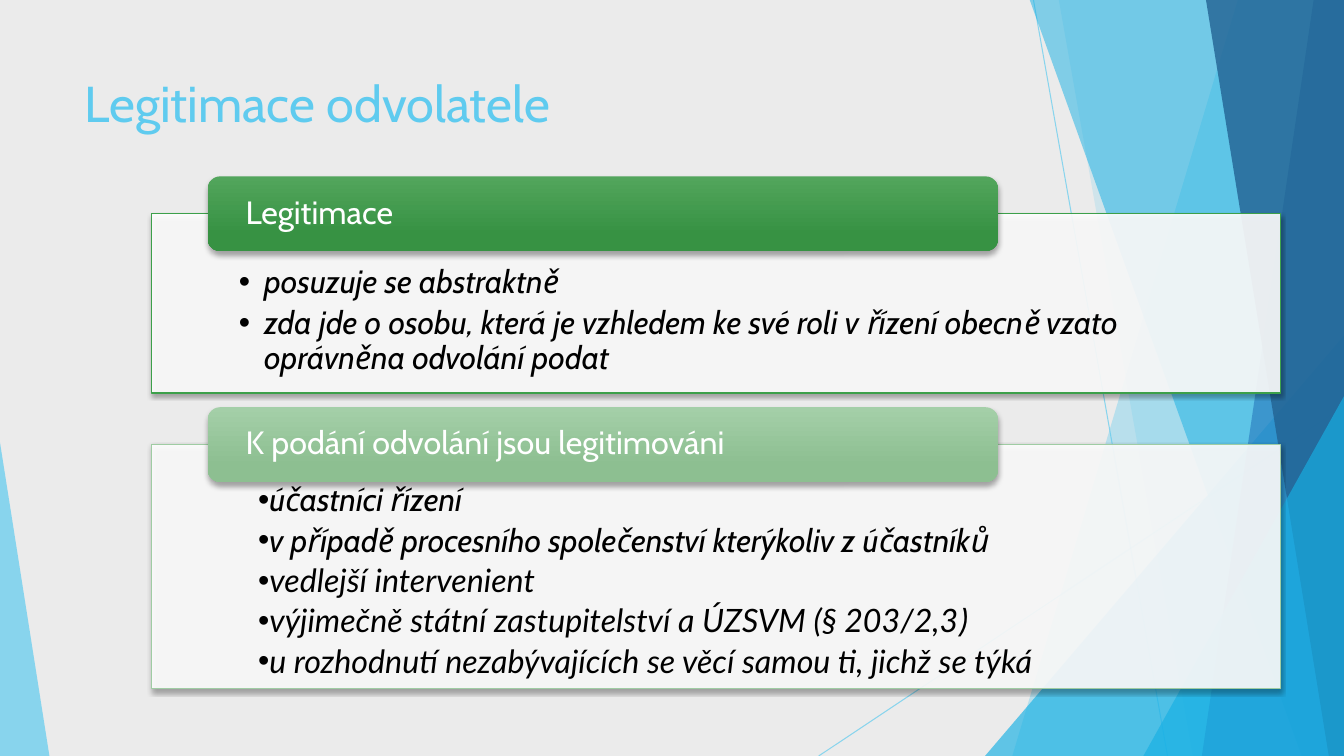
"""Build the slide on who may lodge an appeal."""
from dataclasses import dataclass

from lxml.etree import SubElement
from pptx import Presentation
from pptx.dml.color import RGBColor
from pptx.enum.shapes import MSO_CONNECTOR, MSO_SHAPE
from pptx.enum.text import MSO_ANCHOR, PP_ALIGN
from pptx.oxml.ns import qn
from pptx.util import Pt

PX = 9144
WIDE, HIGH = 1333, 750
SKY, BLUE, BLACK, WHITE = "5FCBEF", "17B0E4", "000000", "FFFFFF"
CABIN, LATO = "Cabin", "Lato"


@dataclass
class Ray:
    """A thin line from one point to another."""
    start: tuple[int, int]
    end: tuple[int, int]


@dataclass
class Shard:
    """A see-through piece, given by its corners."""
    points: list[tuple[int, int]]
    tone: str
    alpha: int


@dataclass
class Wedge:
    """A see-through triangle, with its tip at a share of its width."""
    box: tuple[int, int, int, int]
    tip: int
    tone: str
    alpha: int


@dataclass
class Line:
    """A bullet line, with an optional tail in Cabin."""
    text: str
    face: str = CABIN
    tail: str = ""


@dataclass
class Panel:
    """A framed list with a header tab over its top edge."""
    top: int
    height: int
    edge: str
    shades: tuple[str, str]
    inset: tuple[int, int, int, int]
    hang: int
    head: str
    lines: list[Line]


def tone(code: str) -> RGBColor:
    """Turn a hex string into a colour."""
    return RGBColor.from_string(code)


def scale(*sizes: int) -> list[int]:
    """Turn px into EMU."""
    return [size * PX for size in sizes]


def fade(shape, alpha: int) -> None:
    """Set the opacity of the first colour in a shape, in percent."""
    color = next(shape.element.iter(qn("a:srgbClr")))
    SubElement(color, qn("a:alpha"), val=str(alpha * 1000))


def paint(shape, code: str, alpha: int) -> None:
    """Fill a shape without outline or shadow."""
    shape.shadow.inherit = False
    shape.fill.solid()
    shape.fill.fore_color.rgb = tone(code)
    shape.line.fill.background()
    fade(shape, alpha)


def shade(shape, blur: int, drop: int) -> None:
    """Cast a soft shadow straight down, in points."""
    shape.shadow.inherit = False
    effects = shape.element.spPr.find(qn("a:effectLst"))
    outer = SubElement(effects, qn("a:outerShdw"), blurRad=str(Pt(blur)),
                       dist=str(Pt(drop)), dir="5400000", rotWithShape="0")
    color = SubElement(outer, qn("a:srgbClr"), val=BLACK)
    SubElement(color, qn("a:alpha"), val="35000")


def style(run, size: int, code: str, face: str = CABIN, slant: bool = False) -> None:
    """Format one run."""
    font = run.font
    font.size, font.name, font.italic = Pt(size), face, slant
    font.color.rgb = tone(code)


def inset(frame, sides: tuple[int, int, int, int]) -> None:
    """Wrap a text frame and set its four margins."""
    frame.word_wrap = True
    (frame.margin_left, frame.margin_top,
     frame.margin_right, frame.margin_bottom) = scale(*sides)


def draw_ray(slide, ray: Ray) -> None:
    """Draw one thin line."""
    link = slide.shapes.add_connector(MSO_CONNECTOR.STRAIGHT, *scale(*ray.start, *ray.end))
    link.line.color.rgb = tone(SKY)
    link.line.width = Pt(0.75)
    fade(link, 70)
    SubElement(link.element.spPr, qn("a:effectLst"))


def draw_shard(slide, shard: Shard) -> None:
    """Draw one free outline."""
    pen = slide.shapes.build_freeform(*shard.points[0], scale=PX)
    pen.add_line_segments(shard.points[1:], close=True)
    paint(pen.convert_to_shape(), shard.tone, shard.alpha)


def draw_wedge(slide, wedge: Wedge) -> None:
    """Draw one triangle."""
    shape = slide.shapes.add_shape(MSO_SHAPE.ISOSCELES_TRIANGLE, *scale(*wedge.box))
    shape.adjustments[0] = wedge.tip
    paint(shape, wedge.tone, wedge.alpha)


def write_line(para, line: Line, hang: int) -> None:
    """Write one bullet line."""
    para.text = line.text
    style(para.runs[0], 23, BLACK, line.face, True)
    if line.tail:
        run = para.add_run()
        run.text = line.tail
        style(run, 23, BLACK, slant=True)
    para.level, para.alignment = 1, PP_ALIGN.LEFT
    para.line_spacing, para.space_after = 0.9, Pt(4)
    props = para._p.get_or_add_pPr()
    props.set("marL", str(25 * PX))
    props.set("indent", str(hang * PX))
    SubElement(props, qn("a:buFont"), typeface="Arial")
    SubElement(props, qn("a:buChar"), char="•")


def draw_panel(slide, panel: Panel) -> None:
    """Draw a framed list and its header."""
    body = slide.shapes.add_shape(MSO_SHAPE.RECTANGLE, *scale(150, panel.top, 1120, panel.height))
    paint(body, WHITE, 90)
    body.line.color.rgb = tone(panel.edge)
    body.line.width = Pt(1)
    shade(body, 3, 2)
    frame = body.text_frame
    inset(frame, panel.inset)
    frame.vertical_anchor = MSO_ANCHOR.TOP
    for index, line in enumerate(panel.lines):
        para = frame.add_paragraph() if index else frame.paragraphs[0]
        write_line(para, line, panel.hang)

    tab = slide.shapes.add_shape(MSO_SHAPE.ROUNDED_RECTANGLE, *scale(206, panel.top - 37, 784, 74))
    tab.fill.gradient()
    tab.fill.gradient_angle = 270
    for stop, code, place in zip(tab.fill.gradient_stops, panel.shades, (0, 0.78)):
        stop.color.rgb = tone(code)
        stop.position = place
    tab.line.fill.background()
    shade(tab, 4, 3)
    frame = tab.text_frame
    frame.text = panel.head
    inset(frame, (34, 0, 34, 0))
    frame.vertical_anchor = MSO_ANCHOR.MIDDLE
    para = frame.paragraphs[0]
    para.alignment, para.line_spacing = PP_ALIGN.LEFT, 0.9
    style(para.runs[0], 23, WHITE)


def right(top: int, low: int, code: str, alpha: int, base: int = WIDE) -> Shard:
    """Give a piece that reaches from a slanted left edge to the slide's right side."""
    return Shard([(top, -1), (WIDE, -1), (base, HIGH), (low, HIGH)], code, alpha)


DECOR = [
    Ray((1025, 0), (1158, HIGH)),
    Ray((WIDE, 403), (812, HIGH)),
    right(1228, 1004, SKY, 36),
    right(1050, 1183, SKY, 20),
    Wedge((977, 333, 356, 417), 1, BLUE, 66),
    right(1021, 1291, BLUE, 50),
    right(1303, 1192, "2E83C3", 70),
    right(1196, 1318, "226292", 80),
    Wedge((1134, 393, 199, 357), 1, BLUE, 66),
    Wedge((0, 439, 49, 311), 0, SKY, 70),
]
PANELS = [
    Panel(212, 178, "3CA04A", ("52A55C", "379243"), (87, 52, 87, 18), -25, "Legitimace", [
        Line("posuzuje se abstraktně"),
        Line("zda jde o osobu, která je vzhledem ke své roli v řízení obecně vzato oprávněna odvolání podat"),
    ]),
    Panel(441, 242, "9FCCA3", ("A4CFA8", "8DBF91"), (81, 39, 81, 13), 0,
          "K podání odvolání jsou legitimováni", [
        Line("účastníci řízení"),
        Line("v případě procesního společenství kterýkoliv z účastníků"),
        Line("vedlejší intervenient", LATO),
        Line("výjimečně státní zastupitelství a ÚZSVM (§ 203/2,3", LATO, ")"),
        Line("u rozhodnutí nezabývajících se věcí samou ti, jichž se týká", LATO),
    ]),
]
DRAW = {Ray: draw_ray, Shard: draw_shard, Wedge: draw_wedge, Panel: draw_panel}


def main() -> None:
    """Build and save the slide."""
    deck = Presentation()
    deck.slide_width, deck.slide_height = scale(WIDE, HIGH)
    slide = deck.slides.add_slide(deck.slide_layouts[6])
    slide.background.fill.solid()
    slide.background.fill.fore_color.rgb = tone("EBEBEB")
    for item in DECOR:
        DRAW[type(item)](slide, item)
    title = slide.shapes.add_textbox(*scale(74, 67, 940, 144)).text_frame
    title.text = "Legitimace odvolatele"
    title.word_wrap = True
    style(title.paragraphs[0].runs[0], 36, SKY)
    for panel in PANELS:
        draw_panel(slide, panel)
    deck.save("out.pptx")


if __name__ == "__main__":
    main()
